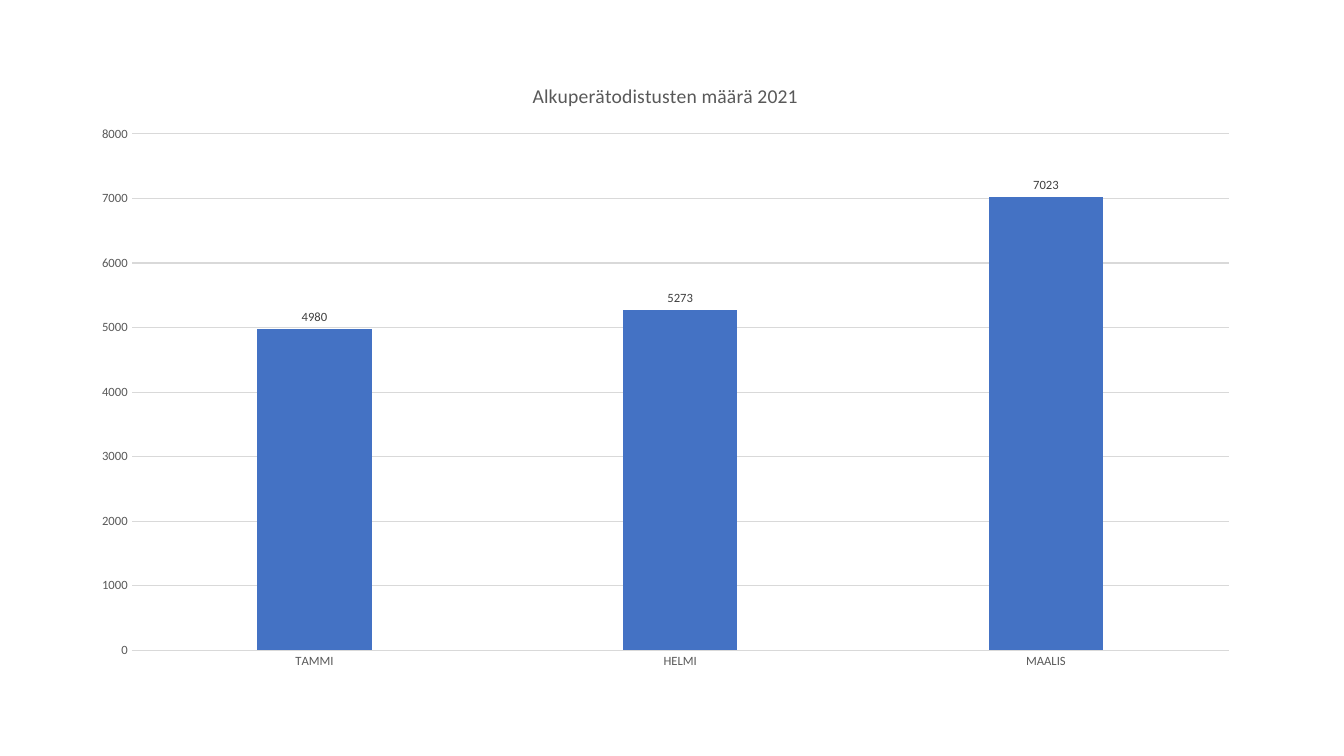
from dataclasses import dataclass

import pptx
import pptx.chart.data
import pptx.dml.color
import pptx.enum.chart
import pptx.util
from pptx.util import Inches


@dataclass(frozen=True)
class Theme:
    font: str = "Calibri"
    bar: str = "4472C4"
    grid: str = "D9D9D9"
    text: str = "595959"
    value: str = "404040"
    title_size: float = 14
    label_size: float = 9
    line_width: float = 0.75


theme = Theme()


def style_font(font, size, color):
    font.name = theme.font
    font.size = pptx.util.Pt(size)
    font.bold = False
    font.color.rgb = pptx.dml.color.RGBColor.from_string(color)


def style_line(line):
    line.width = pptx.util.Pt(theme.line_width)
    line.color.rgb = pptx.dml.color.RGBColor.from_string(theme.grid)


presentation = pptx.Presentation()
presentation.slide_width = Inches(13.33)
presentation.slide_height = Inches(7.5)
slide = presentation.slides.add_slide(presentation.slide_layouts[6])

certificates = pptx.chart.data.CategoryChartData(number_format="0")
certificates.categories = ["TAMMI", "HELMI", "MAALIS"]
certificates.add_series("Series 1", [4980, 5273, 7023])

chart = slide.shapes.add_chart(
    pptx.enum.chart.XL_CHART_TYPE.COLUMN_CLUSTERED,
    Inches(0.78), Inches(0.6), Inches(11.64), Inches(6.16), certificates,
).chart
chart.has_legend = False
chart.font.name = theme.font
chart.font.size = pptx.util.Pt(10)

chart.has_title = True
title = chart.chart_title.text_frame.paragraphs[0].add_run()
title.text = "Alkuperätodistusten määrä 2021"
style_font(title.font, theme.title_size, theme.text)
chart.chart_title.include_in_layout = False

months = chart.category_axis
counts = chart.value_axis
for axis in (months, counts):
    axis.major_tick_mark = pptx.enum.chart.XL_TICK_MARK.NONE
    axis.minor_tick_mark = pptx.enum.chart.XL_TICK_MARK.NONE
    style_font(axis.tick_labels.font, theme.label_size, theme.text)
style_line(months.format.line)
counts.format.line.fill.background()
counts.minimum_scale = 0
counts.maximum_scale = 8000
counts.major_unit = 1000
counts.has_major_gridlines = True
style_line(counts.major_gridlines.format.line)
counts.tick_labels.number_format = "0"
counts.tick_labels.number_format_is_linked = False

columns = chart.plots[0]
columns.vary_by_categories = False
columns.gap_width = 219
columns.overlap = -27
bars = columns.series[0]
bars.format.fill.solid()
bars.format.fill.fore_color.rgb = pptx.dml.color.RGBColor.from_string(theme.bar)

values = bars.data_labels
values.show_value = True
values.position = pptx.enum.chart.XL_LABEL_POSITION.OUTSIDE_END
values.number_format = "0"
values.number_format_is_linked = False
style_font(values.font, theme.label_size, theme.value)

presentation.save("out.pptx")
